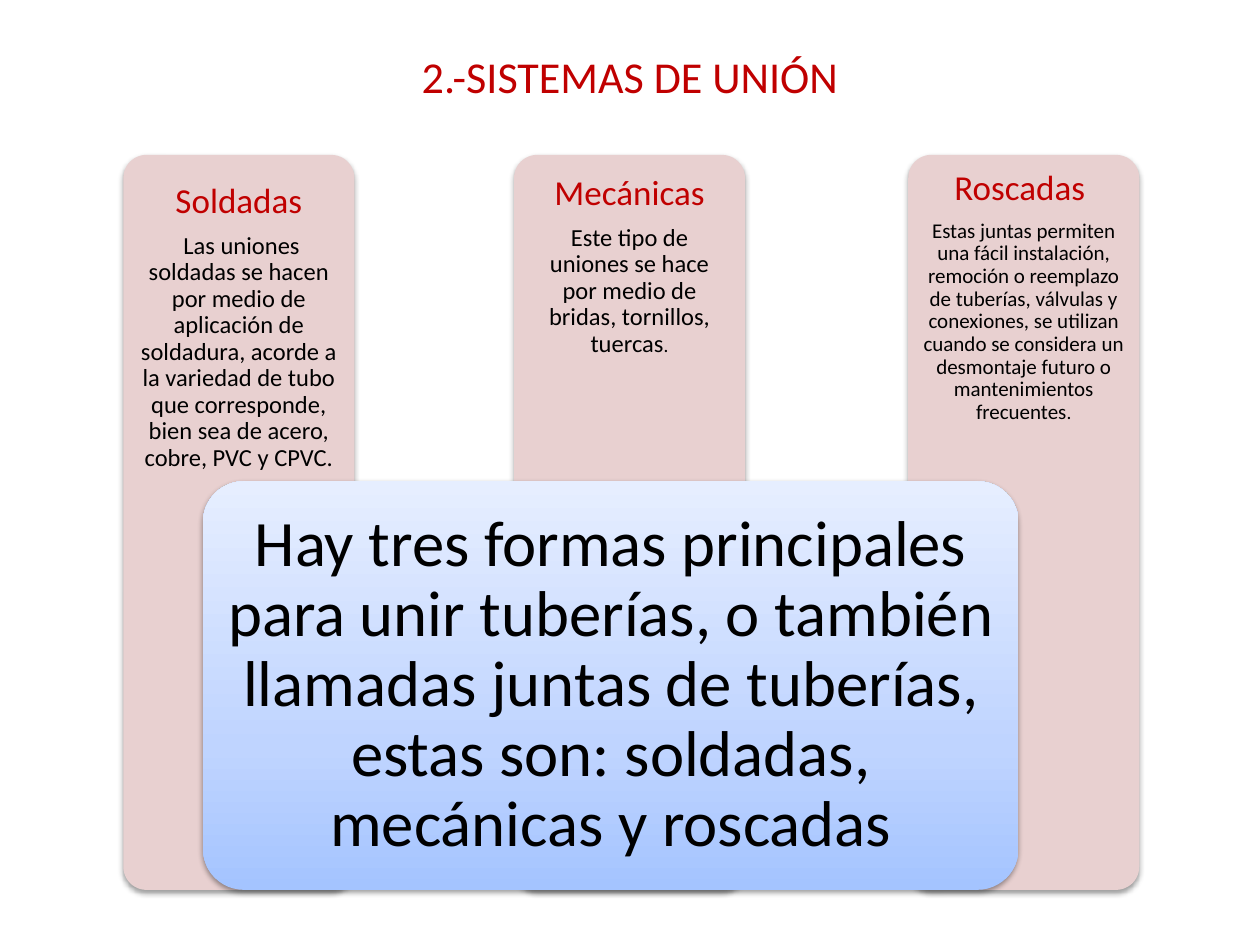
from lxml.etree import fromstring
from pptx import Presentation
from pptx.dml.color import RGBColor as RGB
from pptx.enum.shapes import MSO_SHAPE as Shape
from pptx.enum.text import MSO_ANCHOR as Anchor, PP_ALIGN as Align
from pptx.util import Pt

RED = RGB(0xC0, 0x00, 0x00)
BLACK = RGB(0x00, 0x00, 0x00)
PINK = RGB(0xE8, 0xD0, 0xD0)
BLUES = (
    (0, RGB(0xA4, 0xC4, 0xFF)),
    (35, RGB(0xBF, 0xD4, 0xFF)),
    (100, RGB(0xE6, 0xEE, 0xFF)),
)
NS = 'xmlns:a="http://schemas.openxmlformats.org/drawingml/2006/main"'
SHADE = (
    f'<a:effectLst {NS}><a:outerShdw blurRad="{Pt(3.1)}" dist="{Pt(1.6)}" '
    'dir="5400000" rotWithShape="0"><a:srgbClr val="000000">'
    '<a:alpha val="38000"/></a:srgbClr></a:outerShdw></a:effectLst>'
)
TOP, TALL, WIDE = 88.5, 420, 132
CARDS = (
    (70.5, (4.2, 12.2), "Soldadas", 14,
     " Las uniones soldadas se hacen por medio de aplicación de soldadura, "
     "acorde a la variedad de tubo que corresponde, bien sea de acero, "
     "cobre, PVC y CPVC.", ""),
    (293.75, (7.7, 7.7), "Mecánicas", 14,
     "Este tipo de uniones se hace por medio de bridas, tornillos, tuercas", "."),
    (519, (2.7, 4.7), "Roscadas ", 12,
     "Estas juntas permiten una fácil instalación, remoción o reemplazo de "
     "tuberías, válvulas y conexiones, se utilizan cuando se considera un "
     "desmontaje futuro o mantenimientos frecuentes", "."),
)


def write(para, text, size=14, color=BLACK):
    """Add a centred run of text to a paragraph."""
    para.alignment = Align.CENTER
    run = para.add_run()
    run.text = text
    font = run.font
    font.name, font.size, font.color.rgb = "Calibri", Pt(size), color


def block(slide, box, inset, anchor):
    """Add a shaded round box and return it with its text frame."""
    shape = slide.shapes.add_shape(Shape.ROUNDED_RECTANGLE, *map(Pt, box))
    shape.adjustments[0] = 0.1
    shape.line.fill.background()
    shape._element.spPr.append(fromstring(SHADE))
    frame = shape.text_frame
    frame.word_wrap = True
    frame.vertical_anchor = anchor
    side, edge = map(Pt, inset)
    frame.margin_left = frame.margin_right = side
    frame.margin_top = frame.margin_bottom = edge
    return shape, frame


def head(slide, box):
    """Place and format the title."""
    title = slide.shapes.title
    title.left, title.top, title.width, title.height = map(Pt, box)
    title.text_frame.vertical_anchor = Anchor.MIDDLE
    write(title.text_frame.paragraphs[0], "2.-SISTEMAS DE UNIÓN", size=25.2, color=RED)


def card(slide, box, inset, name, size, text, stop):
    """Draw one column with its heading and its text."""
    shape, frame = block(slide, box, inset, Anchor.TOP)
    shape.fill.solid()
    shape.fill.fore_color.rgb = PINK
    first, body = frame.paragraphs[0], frame.add_paragraph()
    first.space_after = Pt(7)
    first.line_spacing = body.line_spacing = 0.9
    write(first, name, size=20, color=RED)
    write(body, text, size=size)
    if stop:
        write(body, stop, size=11)


def panel(slide, box):
    """Draw the blue summary panel."""
    shape, frame = block(slide, box, (2.2, 2.2), Anchor.MIDDLE)
    stops = "".join(
        f'<a:gs pos="{pos * 1000}"><a:srgbClr val="{tint}"/></a:gs>'
        for pos, tint in BLUES
    )
    grad = (
        f'<a:gradFill {NS} rotWithShape="1"><a:gsLst>{stops}</a:gsLst>'
        '<a:lin ang="16200000" scaled="0"/></a:gradFill>'
    )
    shape._element.spPr.insert(2, fromstring(grad))
    para = frame.paragraphs[0]
    para.line_spacing = 0.9
    write(
        para,
        "Hay tres formas principales para unir tuberías, o también llamadas "
        "juntas de tuberías, estas son: soldadas, mecánicas y roscadas",
        size=37,
    )


def main():
    """Build and save the slide."""
    deck = Presentation()
    deck.slide_width, deck.slide_height = Pt(720), Pt(540)
    slide = deck.slides.add_slide(deck.slide_layouts[5])
    head(slide, (36, 21.6, 648, 44))
    for left, *rest in CARDS:
        card(slide, (left, TOP, WIDE, TALL), *rest)
    panel(slide, (116, 275, 466, 233.5))
    deck.save("out.pptx")


if __name__ == "__main__":
    main()
